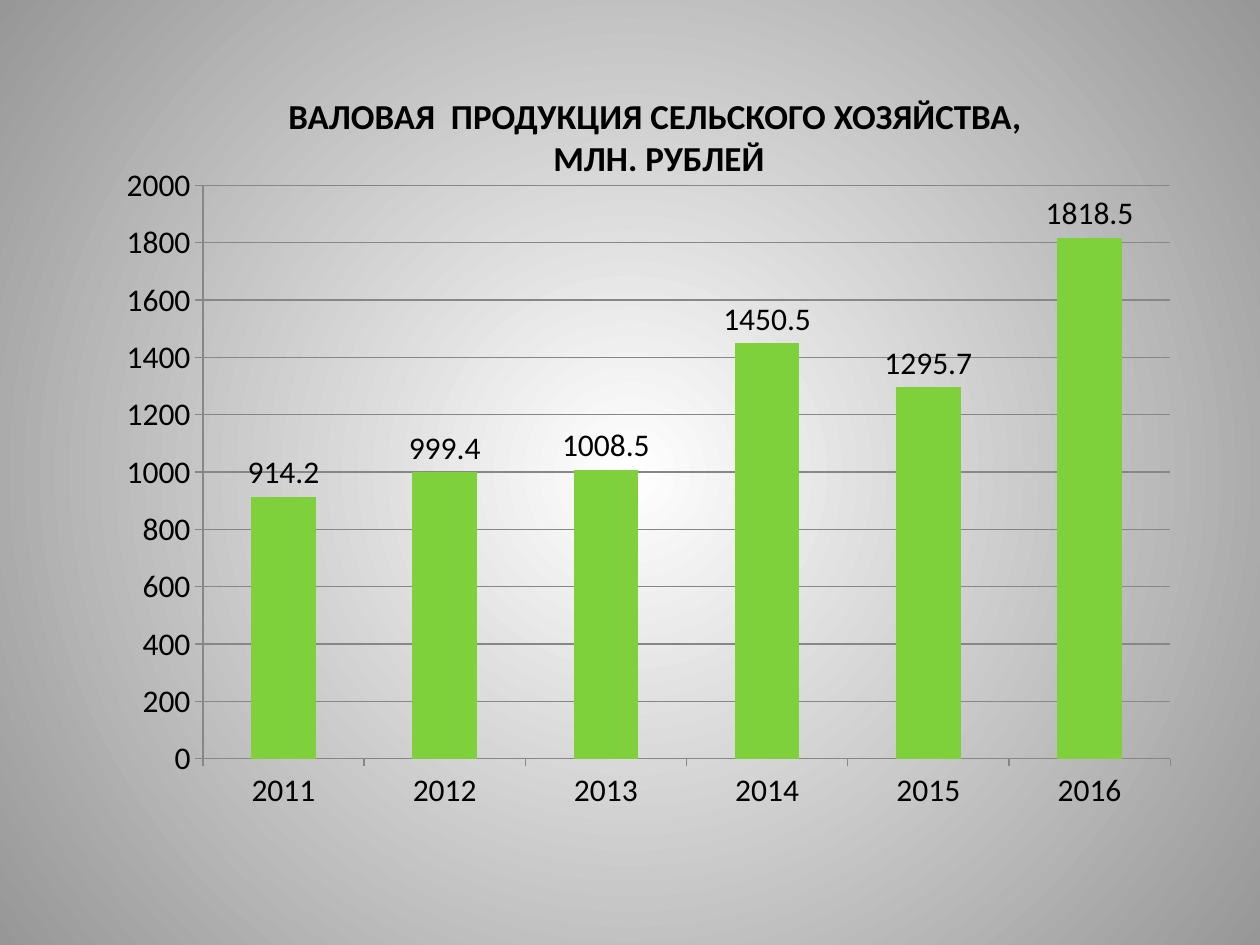
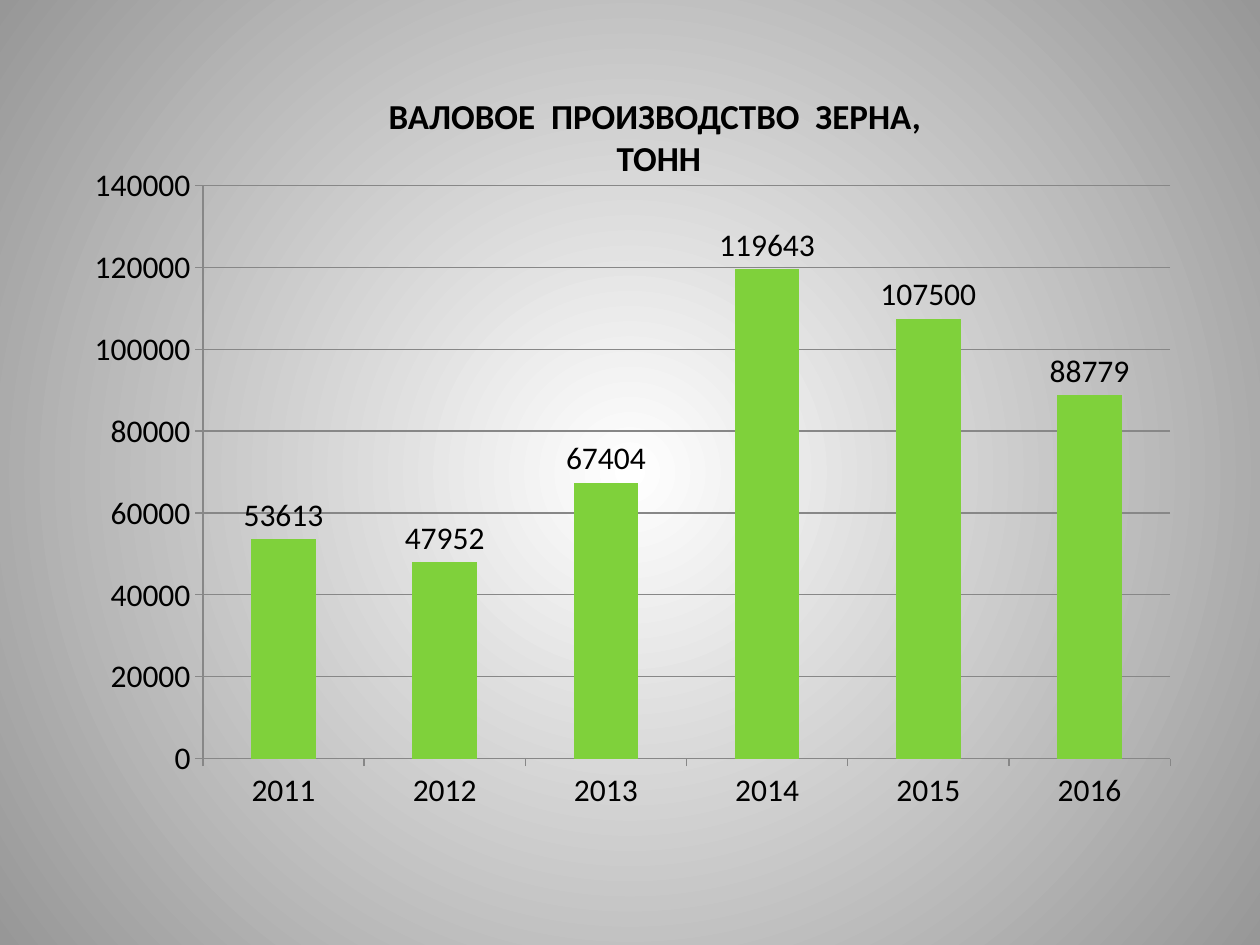
from lxml import etree
from pptx import Presentation
from pptx.chart.data import CategoryChartData
from pptx.dml.color import RGBColor
from pptx.enum.chart import XL_CHART_TYPE, XL_LABEL_POSITION, XL_TICK_MARK
from pptx.enum.text import MSO_AUTO_SIZE, PP_ALIGN
from pptx.oxml import parse_xml
from pptx.oxml.ns import nsdecls, qn
from pptx.util import Inches, Pt

COLUMNS = XL_CHART_TYPE.COLUMN_CLUSTERED
LABEL_ABOVE = XL_LABEL_POSITION.OUTSIDE_END
TICK_OUTSIDE = XL_TICK_MARK.OUTSIDE
TICK_NONE = XL_TICK_MARK.NONE
CENTER = PP_ALIGN.CENTER
GROW = MSO_AUTO_SIZE.SHAPE_TO_FIT_TEXT

FONT = "Calibri"
BLACK, WHITE, GRAY = "000000", "FFFFFF", "979797"
GREEN, AXIS_GRAY = "7FD13B", "878787"
YEARS = ["2011", "2012", "2013", "2014", "2015", "2016"]
PLOT_AREA = {"x": 0.127, "y": 0.068, "w": 0.855, "h": 0.808}

OUTPUT_TITLE = ["ВАЛОВАЯ  ПРОДУКЦИЯ СЕЛЬСКОГО ХОЗЯЙСТВА, ", "МЛН. РУБЛЕЙ"]
OUTPUT_VALUES = [914.2, 999.4, 1008.5, 1450.5, 1295.7, 1818.5]
GRAIN_TITLE = ["ВАЛОВОЕ  ПРОИЗВОДСТВО  ЗЕРНА, ", "ТОНН"]
GRAIN_VALUES = [53613, 47952, 67404, 119643, 107500, 88779]


def color(hex_string):
    return RGBColor.from_string(hex_string)


def style_font(font, size, bold=False):
    font.name = FONT
    font.size = Pt(size)
    font.bold = bold
    font.color.rgb = color(BLACK)


def add_page(deck):
    """Add a blank slide with a gradient spreading from its centre."""
    page = deck.slides.add_slide(deck.slide_layouts[6])
    fill = page.background.fill
    fill.gradient()
    for stop, shade in zip(fill.gradient_stops, (WHITE, GRAY)):
        stop.color.rgb = color(shade)
    linear = page.element.find(".//" + qn("a:lin"))
    radial = parse_xml(
        f'<a:path {nsdecls("a")} path="circle">'
        '<a:fillToRect l="50000" t="50000" r="50000" b="50000"/></a:path>')
    linear.getparent().replace(linear, radial)
    return page


def add_title(page, lines):
    box = page.shapes.add_textbox(
        Inches(1.56), Inches(0.7), Inches(7.34), Inches(0.77))
    frame = box.text_frame
    frame.word_wrap = True
    frame.auto_size = GROW
    frame.text = "\n".join(lines)
    for para in frame.paragraphs:
        para.alignment = CENTER
        for span in para.runs:
            style_font(span.font, 20, bold=True)


def place_plot_area(chart):
    """Fix the inner plot area as fractions of the chart frame."""
    plot_area = chart.element.find(".//" + qn("c:plotArea"))
    for automatic in plot_area.findall(qn("c:layout")):
        plot_area.remove(automatic)
    layout = etree.Element(qn("c:layout"))
    manual = etree.SubElement(layout, qn("c:manualLayout"))
    settings = {"layoutTarget": "inner", "xMode": "edge", "yMode": "edge",
                **PLOT_AREA}
    for tag, value in settings.items():
        etree.SubElement(manual, qn("c:" + tag)).set("val", str(value))
    plot_area.insert(0, layout)


def style_line(line):
    line.color.rgb = color(AXIS_GRAY)
    line.width = Pt(0.75)


def add_column_chart(page, values, top, step):
    data = CategoryChartData()
    data.categories = YEARS
    data.add_series("Series 1", values)
    chart = page.shapes.add_chart(
        COLUMNS, Inches(0.47), Inches(1.09), Inches(8.98), Inches(5.63),
        data).chart
    chart.has_legend = False
    chart.has_title = False
    style_font(chart.font, 18)
    place_plot_area(chart)

    for axis in (chart.category_axis, chart.value_axis):
        axis.major_tick_mark = TICK_OUTSIDE
        axis.minor_tick_mark = TICK_NONE
        style_line(axis.format.line)
    value_axis = chart.value_axis
    value_axis.minimum_scale = 0
    value_axis.maximum_scale = top
    value_axis.major_unit = step
    value_axis.has_major_gridlines = True
    style_line(value_axis.major_gridlines.format.line)

    plot = chart.plots[0]
    plot.vary_by_categories = False
    plot.gap_width = 150
    plot.has_data_labels = True
    labels = plot.data_labels
    labels.show_value = True
    labels.position = LABEL_ABOVE
    style_font(labels.font, 18)
    fill = plot.series[0].format.fill
    fill.solid()
    fill.fore_color.rgb = color(GREEN)


def main():
    deck = Presentation()
    deck.slide_width = Inches(10)
    deck.slide_height = Inches(7.5)

    output_page = add_page(deck)
    add_column_chart(output_page, OUTPUT_VALUES, top=2000, step=200)
    add_title(output_page, OUTPUT_TITLE)

    grain_page = add_page(deck)
    add_title(grain_page, GRAIN_TITLE)
    add_column_chart(grain_page, GRAIN_VALUES, top=140000, step=20000)

    deck.save("out.pptx")


if __name__ == "__main__":
    main()
